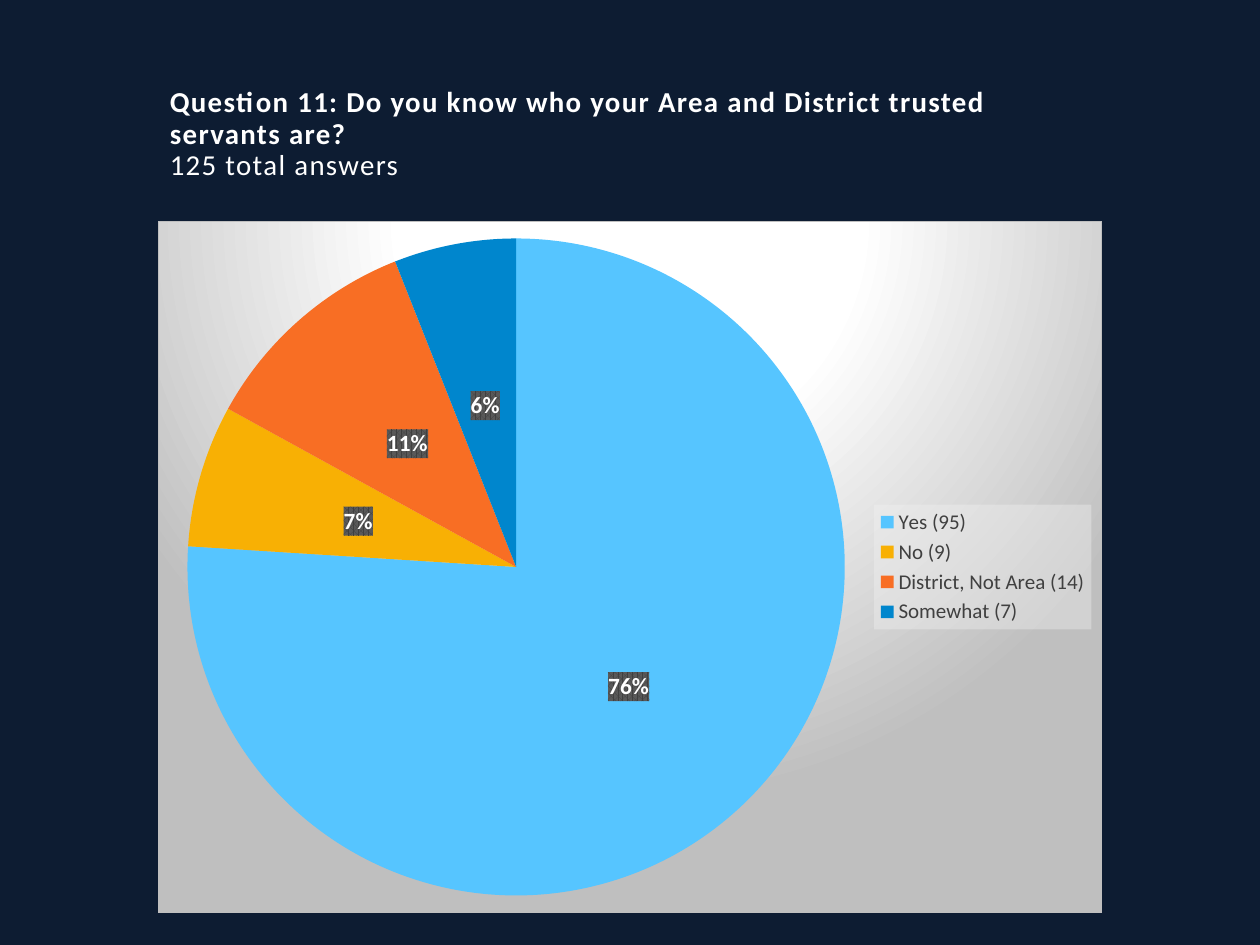
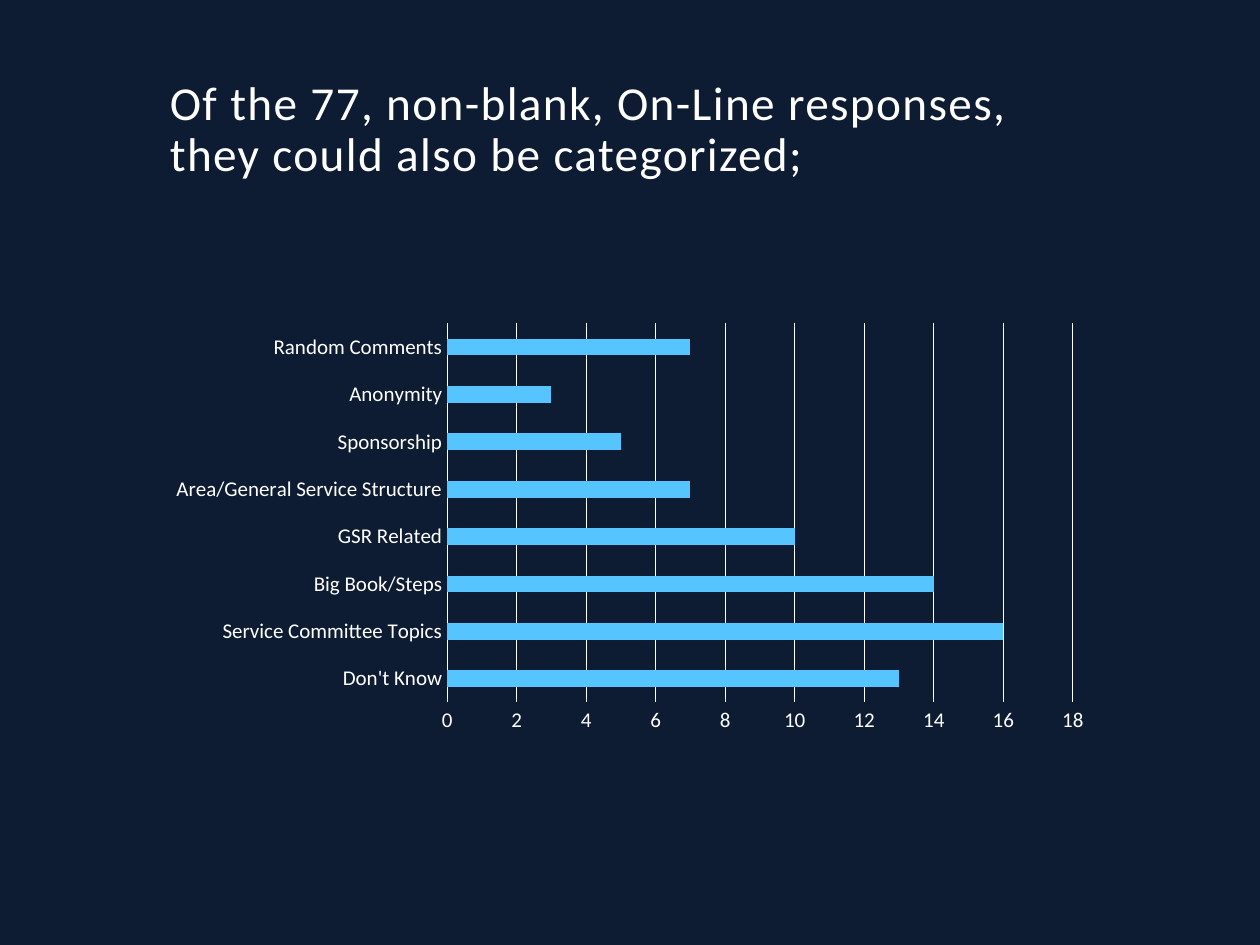
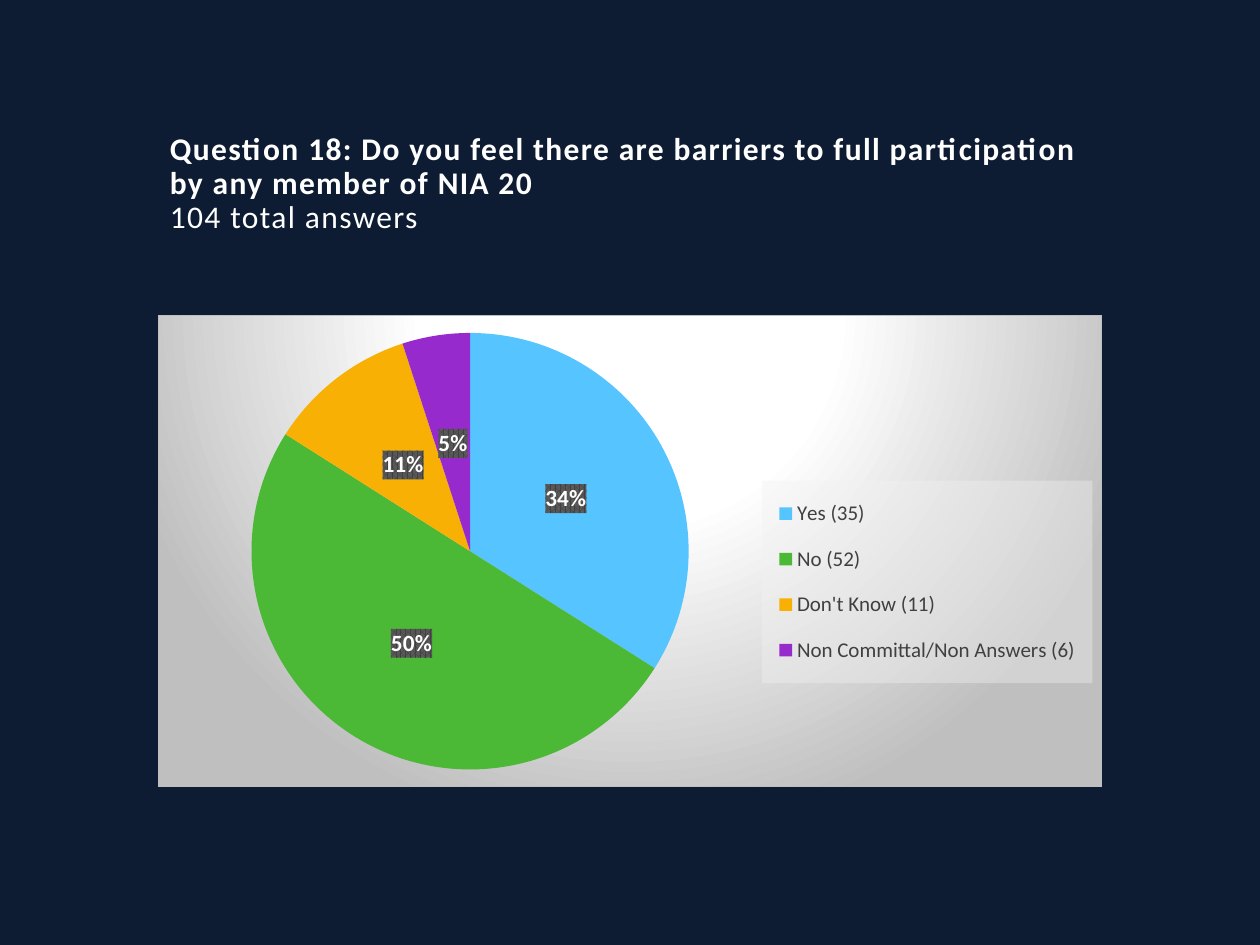
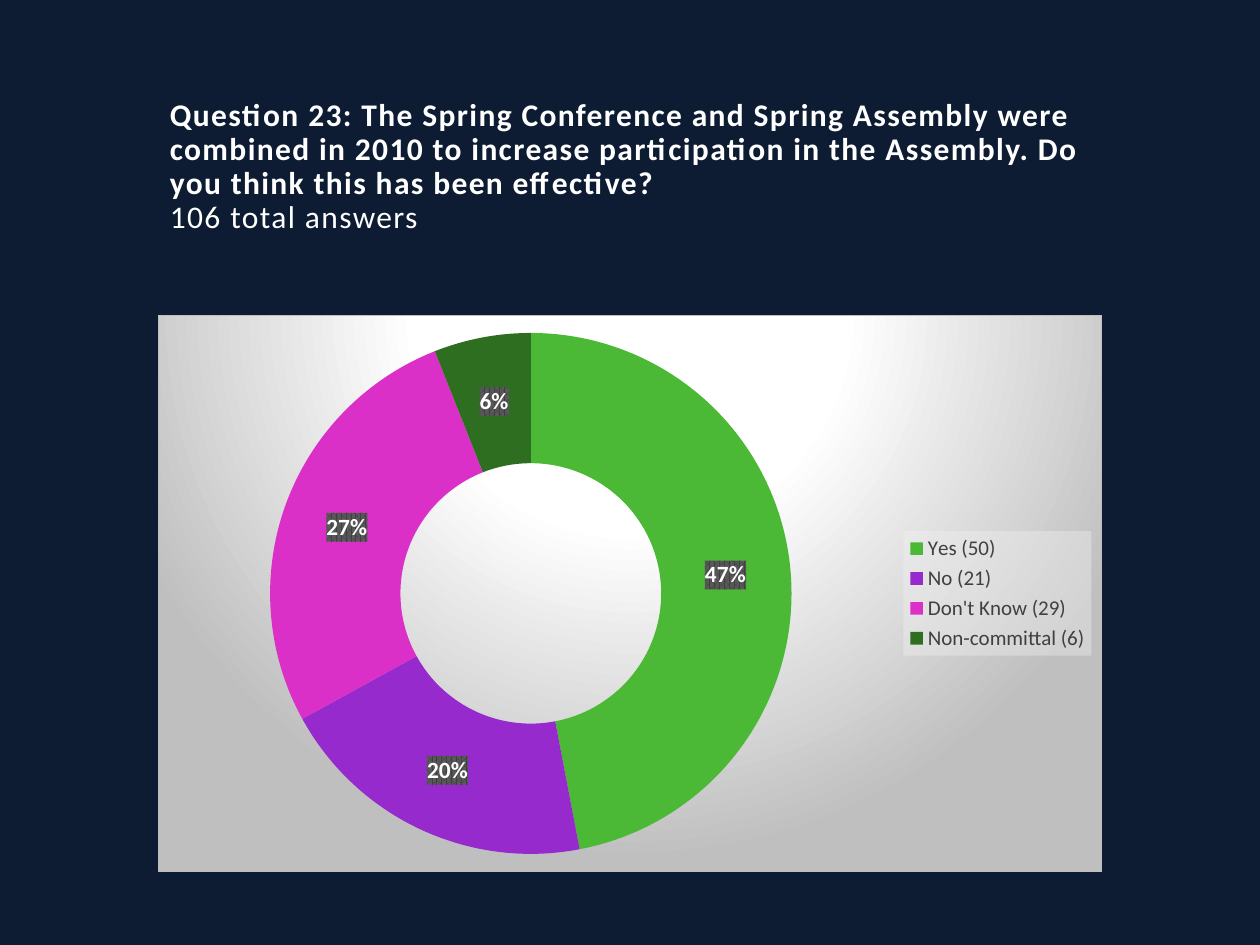
from dataclasses import dataclass

from lxml import etree
from pptx import Presentation
from pptx import util as u
from pptx.chart.data import CategoryChartData
from pptx.dml.color import RGBColor
from pptx.enum import chart as ch, text
from pptx.oxml.ns import qn


@dataclass(frozen=True)
class Theme:
    font: str = "Calibri"
    bg: str = "0D1C32"
    white: str = "FFFFFF"
    ink: str = "404040"
    label_back: str = "595959"
    panel: str = "F2F2F2"
    border: str = "BFBFBF"
    sky: str = "56C5FF"
    amber: str = "F8B004"
    orange: str = "F86E24"
    blue: str = "0086CD"
    green: str = "4BB836"
    purple: str = "972ACD"
    pink: str = "DB30C7"
    forest: str = "2D6E20"
    base: float = 10
    small: float = 12
    label: float = 13.3


T = Theme()
NS = ('xmlns:c="http://schemas.openxmlformats.org/drawingml/2006/chart" '
      'xmlns:a="http://schemas.openxmlformats.org/drawingml/2006/main"')
LEFT, WIDTH = 1.25, 7.5

# Fills that the chart panels share
PANEL_FILL = f"""<c:spPr {NS}><a:gradFill><a:gsLst>
<a:gs pos="0"><a:srgbClr val="{T.white}"/></a:gs>
<a:gs pos="39000"><a:srgbClr val="{T.white}"/></a:gs>
<a:gs pos="100000"><a:srgbClr val="{T.border}"/></a:gs></a:gsLst>
<a:path path="circle"><a:fillToRect l="50000" t="-80000" r="50000" b="180000"/></a:path>
</a:gradFill><a:ln w="9525"><a:solidFill><a:srgbClr val="{T.border}"/></a:solidFill></a:ln></c:spPr>"""
LEGEND_FILL = f"""<c:spPr {NS}><a:solidFill><a:srgbClr val="{T.panel}"><a:alpha val="39000"/>
</a:srgbClr></a:solidFill></c:spPr>"""
LABEL_FILL = f"""<c:spPr {NS}><a:pattFill prst="pct75"><a:fgClr><a:srgbClr val="{T.ink}"/></a:fgClr>
<a:bgClr><a:srgbClr val="{T.label_back}"/></a:bgClr></a:pattFill></c:spPr>"""


def set_font(font, size, color, bold=False):
    font.name, font.size, font.bold = T.font, u.Pt(size), bold
    font.color.rgb = RGBColor.from_string(color)


def add_title(s, lines, size, bottom=0.05):
    """Bottom-anchored title; lines holds (text, bold) pairs."""
    tf = s.shapes.add_textbox(u.Inches(LEFT), u.Inches(0.42), u.Inches(WIDTH), u.Inches(1.5)).text_frame
    tf.word_wrap = True
    tf.vertical_anchor = text.MSO_ANCHOR.BOTTOM
    tf.margin_bottom = u.Inches(bottom)
    p = tf.paragraphs[0]
    p.line_spacing = 0.9
    for i, (line, bold) in enumerate(lines):
        if i:
            p.add_line_break()
        r = p.add_run()
        r.text = line
        set_font(r.font, size, T.white, bold)
        r._r.get_or_add_rPr().set("spc", "80")


PIE, RING, BAR = ch.XL_CHART_TYPE.PIE, ch.XL_CHART_TYPE.DOUGHNUT, ch.XL_CHART_TYPE.BAR_CLUSTERED

# Each slide: title lines, title size, bottom margin, chart type, top, height,
# data as (category, value, colour), legend box as fractions of the chart
slides = [
    ([("Question 11: Do you know who your Area and District trusted servants are?", True),
      ("125 total answers", False)], 16.5, 0.48, PIE, 1.75, 5.5,
     [("Yes (95)", 76, T.sky), ("No (9)", 7, T.amber),
      ("District, Not Area (14)", 11, T.orange), ("Somewhat (7)", 6, T.blue)], None),
    ([("Of the 77, non-blank, On-Line responses, they could also be categorized;", False)],
     27, 0.48, BAR, 2.5, 3.38,
     [("Don't Know", 13, T.sky), ("Service Committee Topics", 16, T.sky),
      ("Big Book/Steps", 14, T.sky), ("GSR Related", 10, T.sky),
      ("Area/General Service Structure", 7, T.sky), ("Sponsorship", 5, T.sky),
      ("Anonymity", 3, T.sky), ("Random Comments", 7, T.sky)], None),
    ([("Question 18: Do you feel there are barriers to full participation by any member of NIA 20", True),
      ("104 total answers", False)], 18, 0.05, PIE, 2.5, 3.75,
     [("Yes (35)", 34, T.sky), ("No (52)", 50, T.green), ("Don't Know (11)", 11, T.amber),
      ("Non Committal/Non Answers (6)", 5, T.purple)],
     {"x": 0.64, "y": 0.35, "w": 0.35, "h": 0.43}),
    ([("Question 23: The Spring Conference and Spring Assembly were combined in 2010 to increase "
       "participation in the Assembly. Do you think this has been effective?", True),
      ("106 total answers", False)], 18, 0.05, RING, 2.5, 4.42,
     [("Yes (50)", 47, T.green), ("No (21)", 20, T.purple),
      ("Don't Know (29)", 27, T.pink), ("Non-committal (6)", 6, T.forest)], None),
]

prs = Presentation()
prs.slide_width, prs.slide_height = u.Inches(10), u.Inches(7.5)

for lines, size, bottom, kind, top, height, rows, legend_box in slides:
    s = prs.slides.add_slide(prs.slide_layouts[6])
    s.background.fill.solid()
    s.background.fill.fore_color.rgb = RGBColor.from_string(T.bg)
    add_title(s, lines, size, bottom)

    # Chart and its data
    cats, vals, colors = zip(*rows)
    data = CategoryChartData()
    data.categories = cats
    data.add_series("Series 1", vals)
    chart = s.shapes.add_chart(kind, u.Inches(LEFT), u.Inches(top), u.Inches(WIDTH),
                               u.Inches(height), data).chart
    chart.has_title = False
    set_font(chart.font, T.base, T.white)
    plot = chart.plots[0]
    series = plot.series[0]

    # Bars: axes and gridlines
    if kind == BAR:
        chart.has_legend = False
        plot.vary_by_categories = False
        plot.gap_width = 182
        series.format.fill.solid()
        series.format.fill.fore_color.rgb = RGBColor.from_string(colors[0])
        for axis in (chart.category_axis, chart.value_axis):
            axis.major_tick_mark = axis.minor_tick_mark = ch.XL_TICK_MARK.NONE
            set_font(axis.tick_labels.font, T.small, T.white)
        chart.value_axis.format.line.fill.background()
        for line in (chart.category_axis.format.line, chart.value_axis.major_gridlines.format.line):
            line.color.rgb = RGBColor.from_string(T.white)
            line.width = u.Pt(0.75)
        continue

    # Pie and ring: slices
    plot.vary_by_categories = True
    for i, color in enumerate(colors):
        fill = series.points[i].format.fill
        fill.solid()
        fill.fore_color.rgb = RGBColor.from_string(color)

    # Percent labels
    labels = series.data_labels
    labels.show_value, labels.show_percentage = False, True
    labels.number_format, labels.number_format_is_linked = "0%", False
    set_font(labels.font, T.label, T.white, True)
    if kind == PIE:
        labels.position = ch.XL_LABEL_POSITION.CENTER

    # Legend
    chart.has_legend = True
    legend = chart.legend
    legend.position = ch.XL_LEGEND_POSITION.RIGHT
    legend.include_in_layout = False
    set_font(legend.font, T.small, T.ink)

    # Panel, legend and label backgrounds
    root = chart.element
    root.find(qn("c:chart")).addnext(etree.fromstring(PANEL_FILL))
    root.find(".//" + qn("c:legend") + "/" + qn("c:overlay")).addnext(etree.fromstring(LEGEND_FILL))
    root.find(".//" + qn("c:dLbls") + "/" + qn("c:numFmt")).addnext(etree.fromstring(LABEL_FILL))
    if legend_box:
        modes = "".join(f'<c:{k}Mode val="edge"/>' for k in "xy")
        sizes = "".join(f'<c:{k} val="{v}"/>' for k, v in legend_box.items())
        root.find(".//" + qn("c:legendPos")).addnext(etree.fromstring(
            f"<c:layout {NS}><c:manualLayout>{modes}{sizes}</c:manualLayout></c:layout>"))

prs.save("out.pptx")
